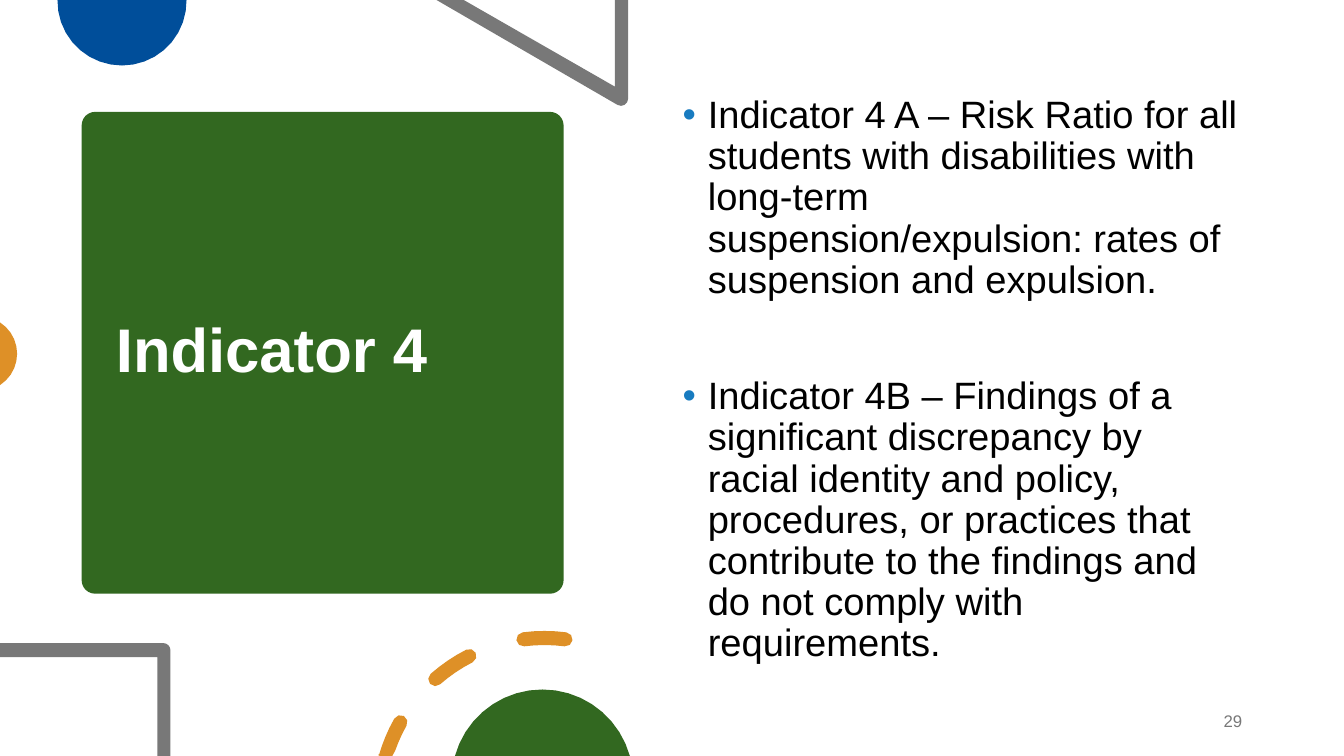
import math

import pptx
import pptx.dml.color
import pptx.enum.shapes
import pptx.enum.text
import pptx.oxml
import pptx.util

Inches = pptx.util.Inches
Pt = pptx.util.Pt
RGBColor = pptx.dml.color.RGBColor
MSO_ANCHOR = pptx.enum.text.MSO_ANCHOR
PP_ALIGN = pptx.enum.text.PP_ALIGN

WIDTH, HEIGHT = 13.33, 7.5
GREEN = RGBColor(0x32, 0x68, 0x20)
BLUE = RGBColor(0x00, 0x4E, 0x9A)
ORANGE = RGBColor(0xDE, 0x90, 0x27)
GRAY = RGBColor(0x78, 0x78, 0x78)
BLACK = RGBColor(0x00, 0x00, 0x00)
WHITE = RGBColor(0xFF, 0xFF, 0xFF)
BULLET_COLOR = "187BC0"
BULLET = (
    '<a:{tag} xmlns:a="http://schemas.openxmlformats.org/drawingml/2006/main" {value}</a:{tag}>'
)


def arc(x, y, radius, start, end, steps=4):
    """Points on a circle, in degrees clockwise from the right, kept inside the slide."""
    angles = [math.radians(start + (end - start) * i / steps) for i in range(steps + 1)]
    return [(max(x + radius * math.cos(a), 0),
             min(max(y + radius * math.sin(a), 0), HEIGHT)) for a in angles]


def write(shape, texts, size, color, bold=False, anchor=MSO_ANCHOR.TOP,
          align=PP_ALIGN.LEFT, line_spacing=1.0, gap=0, bullet=False):
    frame = shape.text_frame
    frame.word_wrap = True
    frame.auto_size = pptx.enum.text.MSO_AUTO_SIZE.NONE
    frame.vertical_anchor = anchor
    for index, text in enumerate(texts):
        paragraph = frame.add_paragraph() if index else frame.paragraphs[0]
        paragraph.text = text
        paragraph.alignment = align
        paragraph.line_spacing = line_spacing
        paragraph.space_before = Pt(gap if index else 0)
        if bullet:
            properties = paragraph._p.get_or_add_pPr()
            properties.set("marL", str(Inches(0.25)))
            properties.set("indent", str(-Inches(0.25)))
            for tag, value in (("buClr", f'><a:srgbClr val="{BULLET_COLOR}"/>'),
                               ("buFont", 'typeface="Arial">'),
                               ("buChar", 'char="•">')):
                properties.append(pptx.oxml.parse_xml(BULLET.format(tag=tag, value=value)))
        paragraph.font.name = "Arial"
        paragraph.font.size = Pt(size)
        paragraph.font.bold = bold
        paragraph.font.color.rgb = color


presentation = pptx.Presentation()
presentation.slide_width = Inches(WIDTH)
presentation.slide_height = Inches(HEIGHT)
slide = presentation.slides.add_slide(presentation.slide_layouts[1])
title, body = slide.placeholders[0], slide.placeholders[1]

# Title card
card = slide.shapes.add_shape(
    pptx.enum.shapes.MSO_SHAPE.ROUNDED_RECTANGLE,
    Inches(0.81), Inches(1.11), Inches(4.78), Inches(4.78))
card.adjustments[0] = 0.028
card.fill.solid()
card.fill.fore_color.rgb = GREEN
card.line.fill.background()
card.shadow.inherit = False
title._element.addprevious(card._element)

# Dashes of one ring, each with rounded ends
RING_X, RING_Y, RING_RADIUS, HALF_DASH = 5.4, 7.97, 1.64, 0.07
dashes = []
for start, end in ((196, 209.4), (228.7, 243), (262.7, 277.3)):
    middle = arc(RING_X, RING_Y, RING_RADIUS, start, end)
    dashes.append([
        *arc(RING_X, RING_Y, RING_RADIUS + HALF_DASH, start, end),
        *arc(*middle[-1], HALF_DASH, end, end + 180),
        *arc(RING_X, RING_Y, RING_RADIUS - HALF_DASH, end, start),
        *arc(*middle[0], HALF_DASH, start + 180, start + 360),
    ])

# Decorations cut by the slide's edges, each a list of outlines
triangle_corner = [(6.23, 0), (6.1, 0), (6.1, 0.86), (4.6, 0), (4.33, 0),
                   *arc(6.16, 0.98, 0.07, 120, 0)]
square_corner = [(0, 6.38), *arc(1.62, 6.45, 0.07, 270, 360),
                 (1.69, HEIGHT), (1.56, HEIGHT), (1.56, 6.52), (0, 6.52)]
decorations = [
    (BLUE, [arc(1.21, 0.01, 0.64, -1, 181, steps=18)]),
    (GRAY, [triangle_corner]),
    (ORANGE, [arc(-0.2, 3.51, 0.37, -57, 57, steps=10)]),
    (GRAY, [square_corner]),
    (ORANGE, dashes),
    (GREEN, [arc(5.38, 7.74, 0.9, 195.5, 344.5, steps=18)]),
]

for color, outlines in decorations:
    outlines = [[(Inches(x), Inches(y)) for x, y in outline] for outline in outlines]
    builder = slide.shapes.build_freeform(*outlines[0][0])
    for outline in outlines:
        if outline is not outlines[0]:
            builder.move_to(*outline[0])
        builder.add_line_segments(outline[1:], close=True)
    shape = builder.convert_to_shape()
    shape.fill.solid()
    shape.fill.fore_color.rgb = color
    shape.line.fill.background()
    shape.shadow.inherit = False

# Text
number = slide.shapes.add_textbox(0, 0, 0, 0)
for shape, box in ((title, (1.05, 1.22, 4.31, 4.56)),
                   (body, (6.67, 0.9, 5.75, 5.35)),
                   (number, (11.49, 6.95, 0.93, 0.4))):
    shape.left, shape.top, shape.width, shape.height = map(Inches, box)

write(title, ["Indicator 4"], 44, WHITE, bold=True, anchor=MSO_ANCHOR.MIDDLE, line_spacing=0.9)
write(body, [
    "Indicator 4 A – Risk Ratio for all students with disabilities with long-term "
    "suspension/expulsion: rates of suspension and expulsion.",
    "Indicator 4B – Findings of a significant discrepancy by racial identity and policy, "
    "procedures, or practices that contribute to the findings and do not comply with "
    "requirements.",
], 27.2, BLACK, line_spacing=0.9, gap=53.8, bullet=True)
write(number, ["29"], 12, GRAY, anchor=MSO_ANCHOR.MIDDLE, align=PP_ALIGN.RIGHT)

presentation.save("out.pptx")
